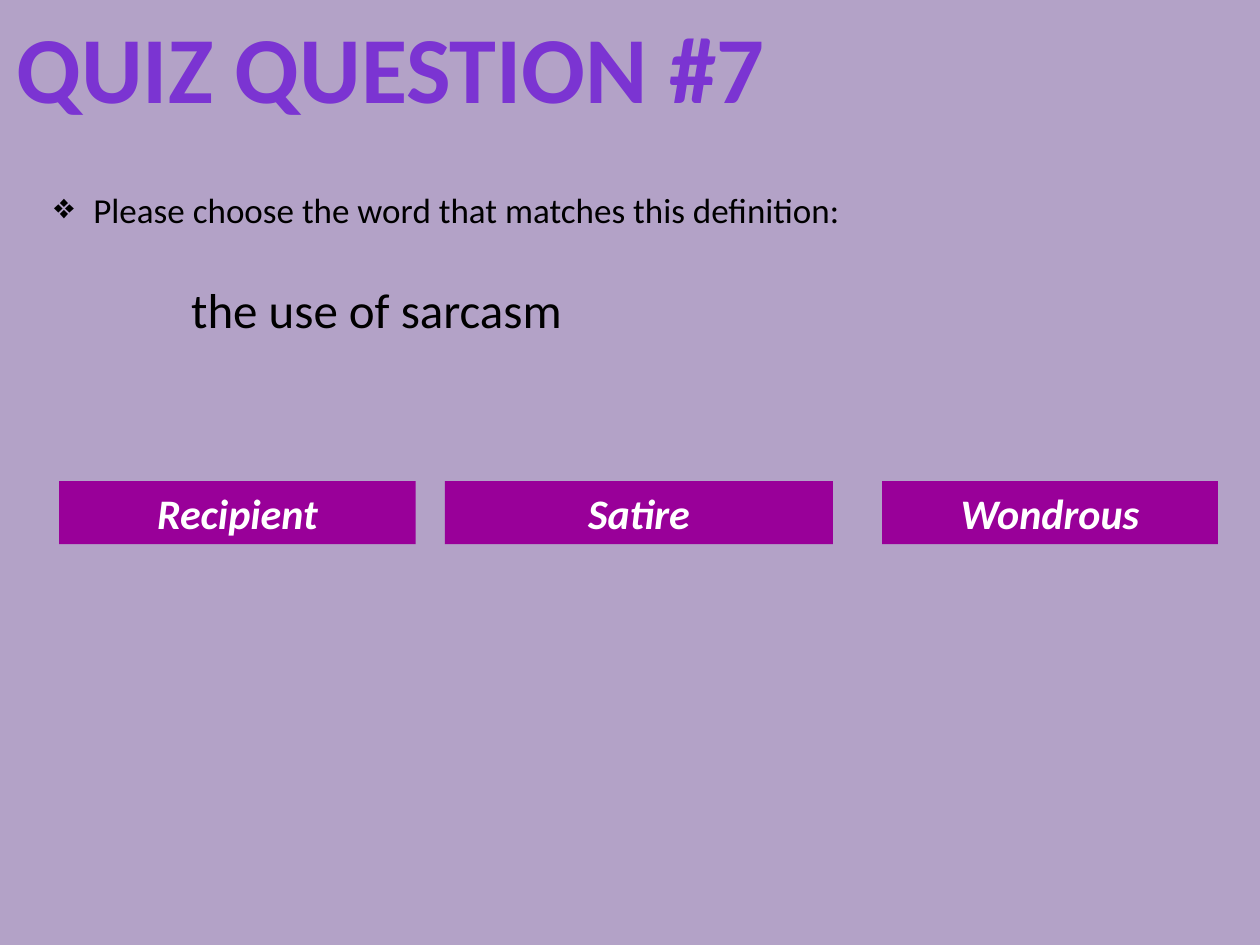
from dataclasses import dataclass

from lxml import etree
from pptx import Presentation
from pptx.dml.color import RGBColor
from pptx.enum.shapes import MSO_SHAPE
from pptx.enum.text import MSO_ANCHOR, MSO_AUTO_SIZE, PP_ALIGN
from pptx.oxml.ns import qn
from pptx.util import Pt

RECT = MSO_SHAPE.RECTANGLE
LEFT, CENTER = PP_ALIGN.LEFT, PP_ALIGN.CENTER
MIDDLE = MSO_ANCHOR.MIDDLE
GROW = MSO_AUTO_SIZE.SHAPE_TO_FIT_TEXT

FONT = "Calibri"
COLORS = {
    "page": "B3A2C7",
    "title": "7B34D2",
    "body": "000000",
    "choice": "990099",
    "label": "FFFFFF",
}


@dataclass
class Choice:
    word: str
    left: float
    width: float


CHOICES = [
    Choice("Satire", 254.2, 221.8),
    Choice("Recipient", 33.8, 203.8),
    Choice("Wondrous", 504, 192),
]
CHOICE_TOP, CHOICE_HEIGHT = 275, 36


def color(name: str) -> RGBColor:
    return RGBColor.from_string(COLORS[name])


def write(shape, text: str, *, size: float, ink: str = "body", bold: bool = False,
          italic: bool = False, align=LEFT, wrap: bool = True):
    """Fill a shape with one formatted paragraph and return the paragraph."""
    frame = shape.text_frame
    frame.word_wrap = wrap
    frame.auto_size = GROW
    para = frame.paragraphs[0]
    para.alignment = align
    run = para.add_run()
    run.text = text
    font = run.font
    font.name, font.size = FONT, Pt(size)
    font.bold, font.italic = bold, italic
    font.color.rgb = color(ink)
    return para


def add_text(slide, box: tuple, text: str, **style):
    return write(slide.shapes.add_textbox(*map(Pt, box)), text, **style)


def add_bullet(para, mark: str, indent: float) -> None:
    props = para._p.get_or_add_pPr()
    props.set("marL", str(Pt(indent)))
    props.set("indent", str(-Pt(indent)))
    etree.SubElement(props, qn("a:buChar")).set("char", mark)


def add_choice(slide, choice: Choice) -> None:
    box = (choice.left, CHOICE_TOP, choice.width, CHOICE_HEIGHT)
    shape = slide.shapes.add_shape(RECT, *map(Pt, box))
    shape.shadow.inherit = False
    shape.fill.solid()
    shape.fill.fore_color.rgb = color("choice")
    shape.line.fill.background()
    shape.text_frame.vertical_anchor = MIDDLE
    write(shape, choice.word, size=24, ink="label", bold=True, italic=True, align=CENTER)


def main() -> None:
    deck = Presentation()
    deck.slide_width, deck.slide_height = Pt(720), Pt(540)
    slide = deck.slides.add_slide(deck.slide_layouts[6])
    slide.background.fill.solid()
    slide.background.fill.fore_color.rgb = color("page")

    # Title
    add_text(slide, (0, 1.5, 446.4, 72.7), "QUIZ QUESTION #7",
             size=54, ink="title", bold=True, align=CENTER, wrap=False)

    # Prompt and definition
    prompt = add_text(slide, (23.8, 104.4, 491.8, 31.5),
                      "Please choose the word that matches this definition:", size=20)
    add_bullet(prompt, "❖", 22.5)
    add_text(slide, (102.2, 156.2, 552.2, 41.2), "the use of sarcasm", size=28)

    # Answer choices
    for choice in CHOICES:
        add_choice(slide, choice)

    deck.save("out.pptx")


if __name__ == "__main__":
    main()
